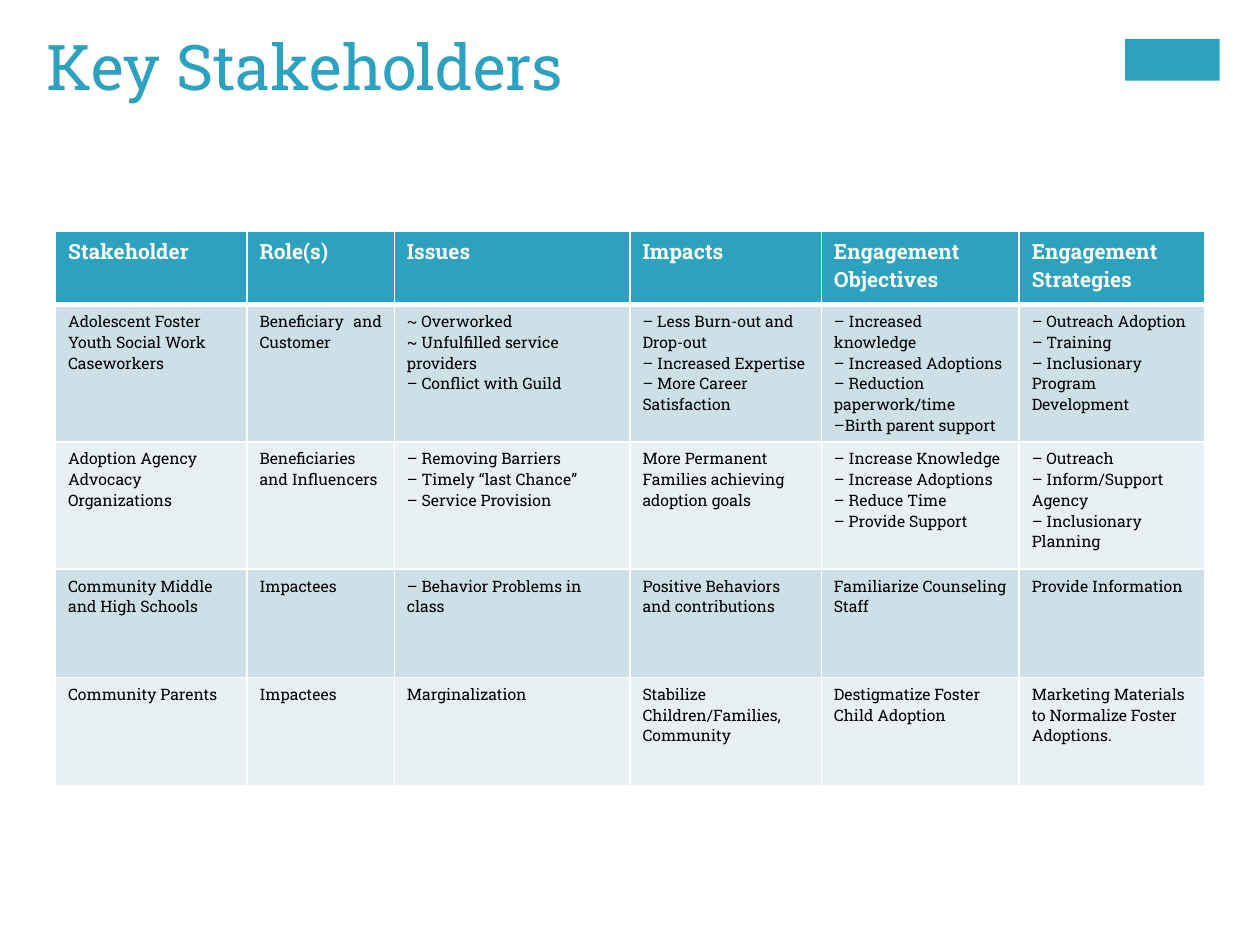
from pptx import Presentation
from pptx import util as u
from pptx.dml.color import RGBColor
from pptx.enum import shapes, text
from pptx.oxml import parse_xml
from pptx.oxml.ns import nsdecls

WIDTH, HEIGHT = u.Inches(10), u.Inches(7.5)
FONT = "Roboto Slab"
TEAL, WHITE, BLACK = "2DA2BF", "FFFFFF", "000000"
BANDS = ["CDE0E8", "E8F0F4"]

# Relative sizes of the grid's columns and rows
COLUMNS = [152, 117, 187, 152, 157, 147]
ROWS = [58, 102, 101, 86, 86]

HEADINGS = ["Stakeholder", "Role(s)", "Issues", "Impacts",
            "Engagement Objectives", "Engagement Strategies"]

# One list per stakeholder; each line of a cell is a paragraph
STAKEHOLDERS = [
    ["Adolescent Foster Youth Social Work Caseworkers",
     "Beneficiary and Customer",
     "~ Overworked\n~ Unfulfilled service providers\n– Conflict with Guild",
     "– Less Burn-out and Drop-out\n– Increased Expertise\n– More Career Satisfaction",
     "– Increased knowledge\n– Increased Adoptions\n– Reduction paperwork/time\n"
     "–Birth parent support",
     "– Outreach Adoption\n– Training\n– Inclusionary Program Development"],
    ["Adoption Agency Advocacy Organizations",
     "Beneficiaries and Influencers",
     "– Removing Barriers\n– Timely “last Chance”\n– Service Provision",
     "More Permanent Families achieving adoption goals",
     "– Increase Knowledge\n– Increase Adoptions\n– Reduce Time\n– Provide Support",
     "– Outreach\n– Inform/Support Agency\n– Inclusionary Planning"],
    ["Community Middle and High Schools",
     "Impactees",
     "– Behavior Problems in class",
     "Positive Behaviors and contributions",
     "Familiarize Counseling Staff",
     "Provide Information"],
    ["Community Parents",
     "Impactees",
     "Marginalization",
     "Stabilize Children/Families, Community",
     "Destigmatize Foster Child Adoption",
     "Marketing Materials to Normalize Foster Adoptions."],
]


def colour(value):
    return RGBColor.from_string(value)


def share(left, top, width, height):
    """Turn percentages of the slide into a box."""
    return (int(WIDTH * left / 100), int(HEIGHT * top / 100),
            int(WIDTH * width / 100), int(HEIGHT * height / 100))


def split(total, weights):
    return [int(total * weight / sum(weights)) for weight in weights]


def write(frame, wording, size, hue, bold=False, align=text.PP_ALIGN.LEFT):
    for index, line in enumerate(wording.split("\n")):
        para = frame.paragraphs[0] if index == 0 else frame.add_paragraph()
        para.alignment = align
        span = para.add_run()
        span.text = line
        span.font.name = FONT
        span.font.size = u.Pt(size)
        span.font.bold = bold
        span.font.color.rgb = colour(hue)


def paint_cell(cell, fill, top=1, bottom=1):
    """Give a cell white borders, widths in points, and a plain fill."""
    properties = cell._tc.get_or_add_tcPr()
    for side, points in (("L", 1), ("R", 1), ("T", top), ("B", bottom)):
        properties.append(parse_xml(
            f'<a:ln{side} {nsdecls("a")} w="{u.Pt(points)}"><a:solidFill>'
            f'<a:srgbClr val="{WHITE}"/></a:solidFill></a:ln{side}>'))
    cell.fill.solid()
    cell.fill.fore_color.rgb = colour(fill)


def place_title(page, box):
    title = page.shapes.title
    title.left, title.top, title.width, title.height = box
    frame = title.text_frame
    frame.word_wrap = True
    frame.auto_size = text.MSO_AUTO_SIZE.NONE
    frame.vertical_anchor = text.MSO_ANCHOR.TOP
    write(frame, "Key Stakeholders", 36, TEAL)


def place_corner_block(page, box):
    block = page.shapes.add_shape(shapes.MSO_SHAPE.RECTANGLE, *box)
    block.shadow.inherit = False
    block.fill.solid()
    block.fill.fore_color.rgb = colour(TEAL)
    block.line.fill.background()


def place_table(page, box):
    grid = page.shapes.add_table(len(ROWS), len(COLUMNS), *box).table
    for column, width in zip(grid.columns, split(box[2], COLUMNS)):
        column.width = width
    for row, height in zip(grid.rows, split(box[3], ROWS)):
        row.height = height

    # Header row
    for cell, heading in zip(grid.rows[0].cells, HEADINGS):
        write(cell.text_frame, heading, 12, WHITE, bold=True)
        paint_cell(cell, TEAL, bottom=3)

    # Banded stakeholder rows
    for index, entries in enumerate(STAKEHOLDERS):
        for cell, entry in zip(grid.rows[index + 1].cells, entries):
            justified = entry == "Beneficiary and Customer"
            align = text.PP_ALIGN.JUSTIFY if justified else text.PP_ALIGN.LEFT
            write(cell.text_frame, entry, 9, BLACK, align=align)
            paint_cell(cell, BANDS[index % 2], top=3 if index == 0 else 1)


def main():
    deck = Presentation()
    deck.slide_width, deck.slide_height = WIDTH, HEIGHT
    page = deck.slides.add_slide(deck.slide_layouts[5])
    place_corner_block(page, share(89.3, 4.13, 7.5, 4.4))
    place_title(page, share(2.7, 2.27, 82.6, 16.27))
    place_table(page, share(4.4, 24.5, 91.2, 57.73))
    deck.save("out.pptx")


if __name__ == "__main__":
    main()
